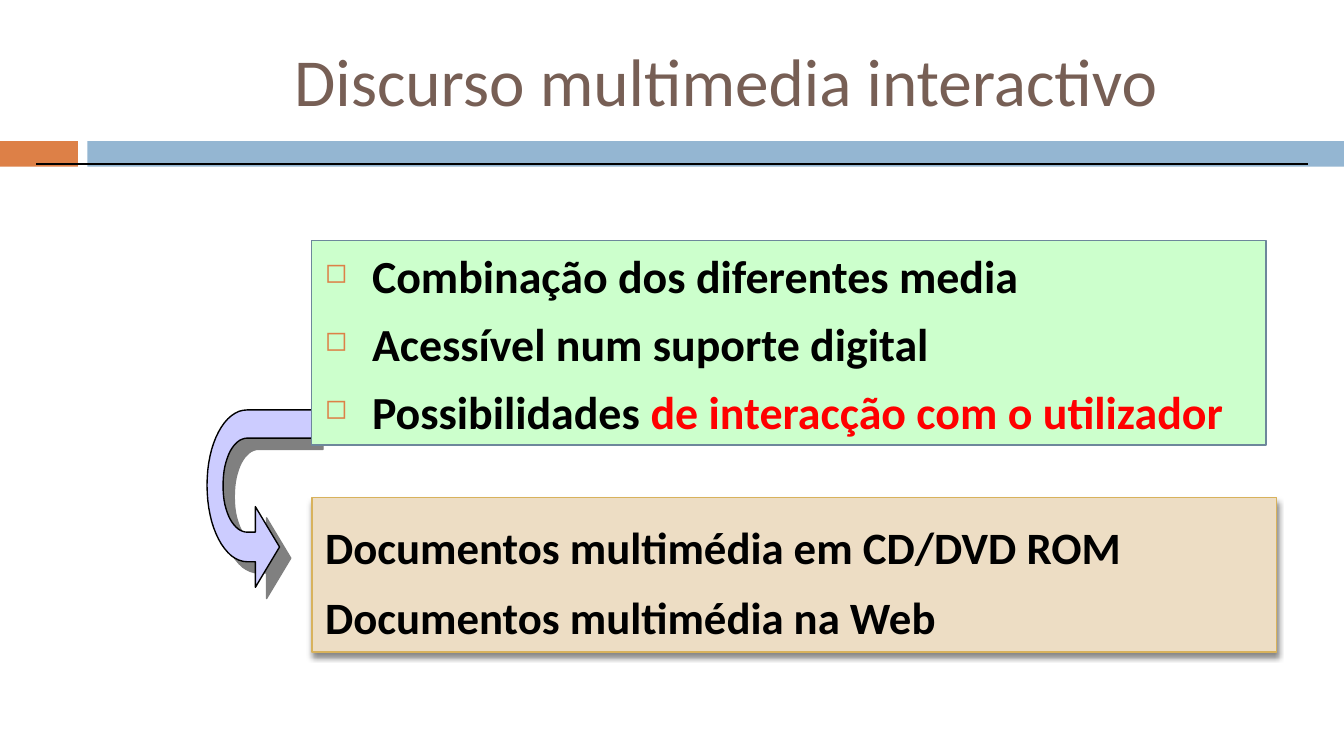
import lxml.etree
import pptx
import pptx.dml.color
import pptx.enum.shapes
import pptx.enum.text
import pptx.oxml.ns
import pptx.util

Inches = pptx.util.Inches
Pt = pptx.util.Pt
RGBColor = pptx.dml.color.RGBColor
qn = pptx.oxml.ns.qn

ORANGE = RGBColor(0xDD, 0x80, 0x47)
BLUE = RGBColor(0x94, 0xB6, 0xD2)
BROWN = RGBColor(0x77, 0x5F, 0x55)
GREEN = RGBColor(0xCC, 0xFF, 0xCC)
SLATE = RGBColor(0x6D, 0x87, 0x9B)
LILAC = RGBColor(0xCC, 0xCC, 0xFF)
SAND = RGBColor(0xED, 0xDD, 0xC4)
GOLD = RGBColor(0xD8, 0xB2, 0x5C)
BLACK = RGBColor(0, 0, 0)
GRAY = RGBColor(0x80, 0x80, 0x80)
RED = RGBColor(0xFF, 0, 0)

FONT = "Calibri"
CURVE_STEPS = 16
UNITS_PER_INCH = 1000
ARROW_START = (2.08, 4.07)
ARROW_SEGMENTS = [
    [(1.9, 4.37)],
    [(1.9, 4.18)],
    [(1.84, 4.18)],
    [(1.67, 4.18), (1.54, 3.92), (1.54, 3.61)],
    [(1.54, 3.3), (1.67, 3.05), (1.84, 3.05)],
    [(2.32, 3.05)],
    [(2.32, 3.26)],
    [(1.84, 3.26)],
    [(1.74, 3.26), (1.66, 3.41), (1.66, 3.6)],
    [(1.66, 3.63)],
    [(1.66, 3.81), (1.74, 3.96), (1.84, 3.96)],
    [(1.9, 3.96)],
    [(1.9, 3.77)],
]


def style_shape(shape, fill, line=None, line_width=0.75):
    shape.shadow.inherit = False
    shape.fill.solid()
    shape.fill.fore_color.rgb = fill
    if line is None:
        shape.line.fill.background()
    else:
        shape.line.color.rgb = line
        shape.line.width = Pt(line_width)


def add_box(slide, left, top, width, height, fill, line=None, line_width=0.75):
    shape = slide.shapes.add_shape(
        pptx.enum.shapes.MSO_SHAPE.RECTANGLE,
        Inches(left), Inches(top), Inches(width), Inches(height))
    style_shape(shape, fill, line, line_width)
    return shape


def add_shadow(shape, color, opacity, blur, distance, degrees):
    effects = shape._element.spPr.find(qn("a:effectLst"))
    shadow = lxml.etree.SubElement(
        effects, qn("a:outerShdw"), blurRad=str(Pt(blur)), dist=str(Pt(distance)),
        dir=str(degrees * 60000), algn="ctr", rotWithShape="0")
    tint = lxml.etree.SubElement(shadow, qn("a:srgbClr"), val=str(color))
    lxml.etree.SubElement(tint, qn("a:alpha"), val=str(opacity * 1000))


def curve_points(start, first, second, end):
    points = []
    for step in range(1, CURVE_STEPS + 1):
        t = step / CURVE_STEPS
        weights = ((1 - t) ** 3, 3 * t * (1 - t) ** 2, 3 * t ** 2 * (1 - t), t ** 3)
        controls = (start, first, second, end)
        points.append(tuple(
            sum(weight * point[axis] for weight, point in zip(weights, controls))
            for axis in (0, 1)))
    return points


def add_curved_arrow(slide):
    points = [ARROW_START]
    for segment in ARROW_SEGMENTS:
        points += curve_points(points[-1], *segment) if len(segment) == 3 else segment
    vertices = [(round(x * UNITS_PER_INCH), round(y * UNITS_PER_INCH)) for x, y in points]
    builder = slide.shapes.build_freeform(*vertices[0], scale=Inches(1) / UNITS_PER_INCH)
    builder.add_line_segments(vertices[1:], close=True)
    arrow = builder.convert_to_shape()
    style_shape(arrow, LILAC, BLACK)
    add_shadow(arrow, GRAY, 100, 0, 8.5, 45)


def add_rule(slide, left, right, top):
    rule = slide.shapes.add_connector(
        pptx.enum.shapes.MSO_CONNECTOR.STRAIGHT,
        Inches(left), Inches(top), Inches(right), Inches(top))
    rule.line.color.rgb = BLACK
    rule.line.width = Pt(0.75)
    lxml.etree.SubElement(rule._element.spPr, qn("a:effectLst"))


def add_bullet(paragraph):
    properties = paragraph._p.get_or_add_pPr()
    properties.set("marL", str(Inches(0.35)))
    properties.set("indent", str(Inches(-0.35)))
    color = lxml.etree.SubElement(properties, qn("a:buClr"))
    lxml.etree.SubElement(color, qn("a:srgbClr"), val=str(ORANGE))
    lxml.etree.SubElement(properties, qn("a:buSzPct"), val="60000")
    lxml.etree.SubElement(properties, qn("a:buChar"), char="◻")


def write_text(shape, lines, size, bold=True, anchor=pptx.enum.text.MSO_ANCHOR.TOP,
               space_before=0, line_spacing=1.0, bullets=False):
    frame = shape.text_frame
    frame.word_wrap = True
    frame.vertical_anchor = anchor
    for index, runs in enumerate(lines):
        paragraph = frame.add_paragraph() if index else frame.paragraphs[0]
        paragraph.alignment = pptx.enum.text.PP_ALIGN.LEFT
        paragraph.space_before = Pt(space_before)
        paragraph.line_spacing = line_spacing
        if bullets:
            add_bullet(paragraph)
        for text, color in runs:
            run = paragraph.add_run()
            run.text = text
            run.font.name = FONT
            run.font.size = Pt(size)
            run.font.bold = bold
            run.font.color.rgb = color


def main():
    presentation = pptx.Presentation()
    presentation.slide_width = Inches(10)
    presentation.slide_height = Inches(10 * 9 / 16)
    slide = presentation.slides.add_slide(presentation.slide_layouts[6])

    add_box(slide, 0, 1.05, 0.58, 0.19, ORANGE)
    add_box(slide, 0.65, 1.05, 9.35, 0.19, BLUE)
    add_curved_arrow(slide)

    title = slide.shapes.add_textbox(Inches(2.09), Inches(0.19), Inches(7.5), Inches(0.81))
    write_text(title, [[("Discurso multimedia interactivo", BROWN)]], 36, bold=False,
               anchor=pptx.enum.text.MSO_ANCHOR.MIDDLE)

    features = add_box(slide, 2.32, 1.79, 7.1, 1.52, GREEN, SLATE)
    write_text(features, [
        [("Combinação dos diferentes media", BLACK)],
        [("Acessível num suporte digital", BLACK)],
        [("Possibilidades ", BLACK), ("de interacção com o utilizador", RED)],
    ], 24.6, space_before=7, bullets=True)

    add_rule(slide, 0.27, 9.73, 1.22)

    documents = add_box(slide, 2.32, 3.7, 7.18, 1.15, SAND, GOLD, 0.79)
    add_shadow(documents, BLACK, 45, 3, 2.4, 90)
    write_text(documents, [
        [("Documentos multimédia em CD/DVD ROM", BLACK)],
        [("Documentos multimédia na Web", BLACK)],
    ], 24, line_spacing=1.3)

    presentation.save("out.pptx")


if __name__ == "__main__":
    main()
